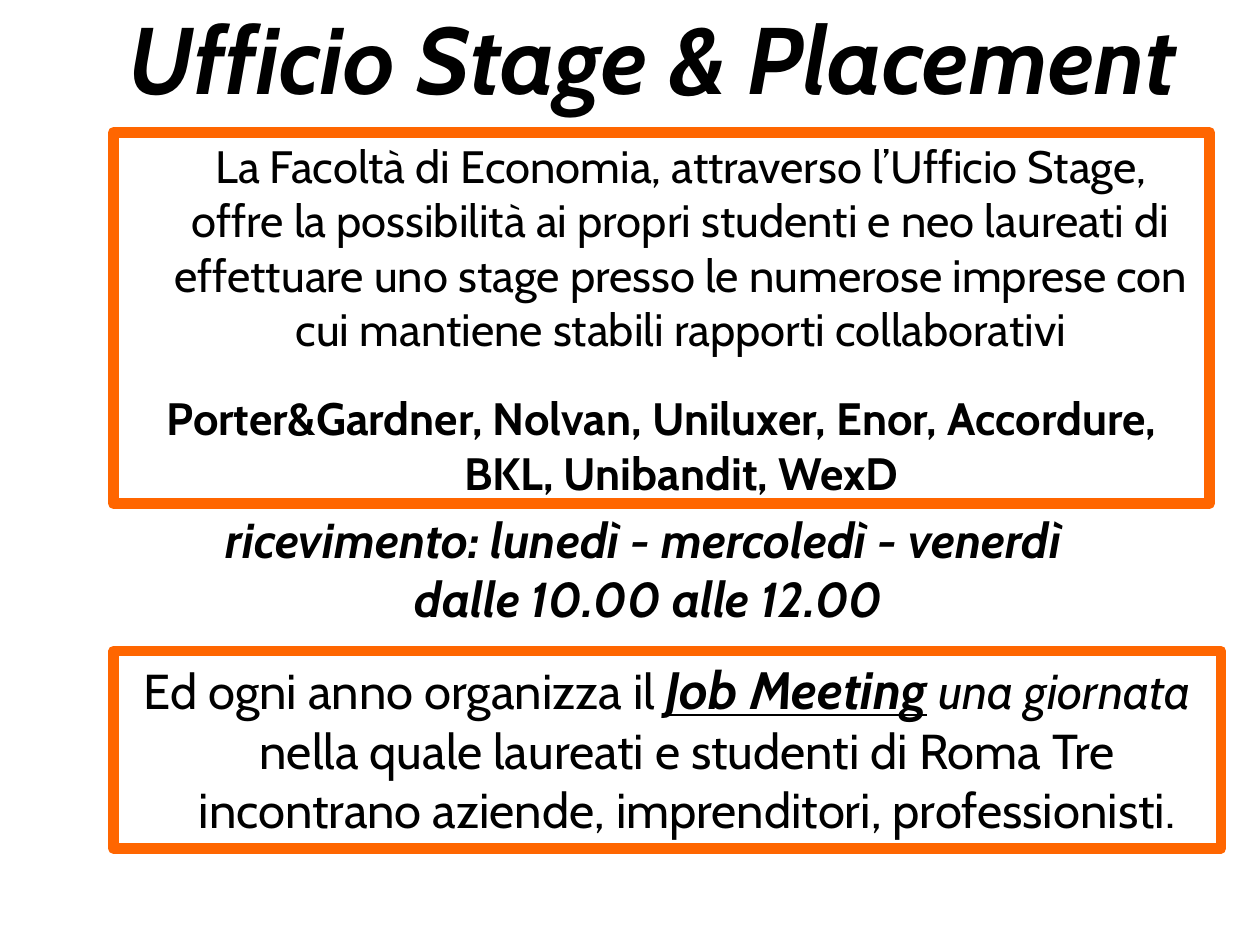
from dataclasses import dataclass

from pptx import Presentation
from pptx.dml.color import RGBColor
from pptx.enum import shapes, text
from pptx.util import Inches, Pt

BLACK = RGBColor(0x00, 0x00, 0x00)
WHITE = RGBColor(0xFF, 0xFF, 0xFF)
ORANGE = RGBColor(0xFF, 0x66, 0x00)
FONT = "Cabin"
SLIDE_WIDTH, SLIDE_HEIGHT = Inches(10), Inches(7.5)
LEFT = 0.09
HANGING = Inches(0.31)


@dataclass(frozen=True)
class Span:
    words: str
    size: float | None = None
    bold: bool | None = None
    italic: bool | None = None
    underline: bool | None = None


@dataclass(frozen=True)
class Para:
    spans: tuple[Span, ...]
    size: float
    bold: bool = False
    italic: bool = False
    margin: int = 0
    indent: int = 0
    before: float = 0
    line_points: float | None = None


@dataclass(frozen=True)
class Block:
    top: float
    width: float
    height: float
    paras: tuple[Para, ...]
    framed: bool = False
    anchor: text.MSO_ANCHOR = text.MSO_ANCHOR.TOP


BLOCKS = (
    Block(-0.012, 0.855, 0.168, (
        Para((Span("Ufficio Stage & Placement"),), 54, bold=True, italic=True,
             line_points=52),
    ), anchor=text.MSO_ANCHOR.MIDDLE),
    Block(0.14, 0.87, 0.393, (
        Para((Span("La Facoltà di Economia, attraverso l’Ufficio Stage, offre la "
                   "possibilità ai propri studenti e neo laureati di effettuare uno "
                   "stage presso le numerose imprese con cui mantiene stabili "
                   "rapporti collaborativi"),), 25.9, margin=HANGING, line_points=31),
        Para((Span("Porter&Gardner, Nolvan, Uniluxer, Enor, Accordure, "
                   "BKL, Unibandit, WexD"),), 25.9, bold=True, margin=HANGING,
             indent=-HANGING, before=20, line_points=31),
    ), framed=True),
    Block(0.533, 0.85, 0.139, (
        Para((Span("ricevimento: lunedì - mercoledì - venerdì \vdalle 10.00 alle 12.00"),),
             28, bold=True, italic=True),
    )),
    Block(0.689, 0.879, 0.209, (
        Para((Span("Ed ogni anno organizza il "),
              Span("Job Meeting", size=30, bold=True, italic=True, underline=True),
              Span(" una giornata", italic=True),
              Span(" nella quale laureati e studenti di Roma Tre incontrano aziende, "
                   "imprenditori, professionisti.")),
             28, margin=HANGING, indent=-HANGING),
    ), framed=True),
)


def write_span(paragraph, span: Span) -> None:
    if "\v" in span.words:
        first, second = span.words.split("\v")
        paragraph.add_run().text = first
        paragraph.add_line_break()
        paragraph.add_run().text = second
        return
    run = paragraph.add_run()
    run.text = span.words
    if span.size:
        run.font.size = Pt(span.size)
    run.font.bold = span.bold
    run.font.italic = span.italic
    run.font.underline = span.underline


def write_para(paragraph, para: Para) -> None:
    paragraph.alignment = text.PP_ALIGN.CENTER
    if para.margin:
        properties = paragraph._p.get_or_add_pPr()
        properties.set("marL", str(int(para.margin)))
        properties.set("indent", str(int(para.indent)))
    if para.before:
        paragraph.space_before = Pt(para.before)
    if para.line_points:
        paragraph.line_spacing = Pt(para.line_points)
    font = paragraph.font
    font.name = FONT
    font.size = Pt(para.size)
    font.bold = para.bold
    font.italic = para.italic
    font.color.rgb = BLACK
    for span in para.spans:
        write_span(paragraph, span)


def draw_block(page, block: Block) -> None:
    place = (int(LEFT * SLIDE_WIDTH), int(block.top * SLIDE_HEIGHT),
             int(block.width * SLIDE_WIDTH), int(block.height * SLIDE_HEIGHT))
    if block.framed:
        box = page.shapes.add_shape(shapes.MSO_SHAPE.RECTANGLE, *place)
        box.shadow.inherit = False
        box.fill.solid()
        box.fill.fore_color.rgb = WHITE
        box.line.color.rgb = ORANGE
        box.line.width = Pt(6)
    else:
        box = page.shapes.add_textbox(*place)
    frame = box.text_frame
    frame.word_wrap = True
    frame.vertical_anchor = block.anchor
    for index, para in enumerate(block.paras):
        write_para(frame.add_paragraph() if index else frame.paragraphs[0], para)


def main() -> None:
    deck = Presentation()
    deck.slide_width, deck.slide_height = SLIDE_WIDTH, SLIDE_HEIGHT
    page = deck.slides.add_slide(deck.slide_layouts[6])
    for block in BLOCKS:
        draw_block(page, block)
    deck.save("out.pptx")


if __name__ == "__main__":
    main()
